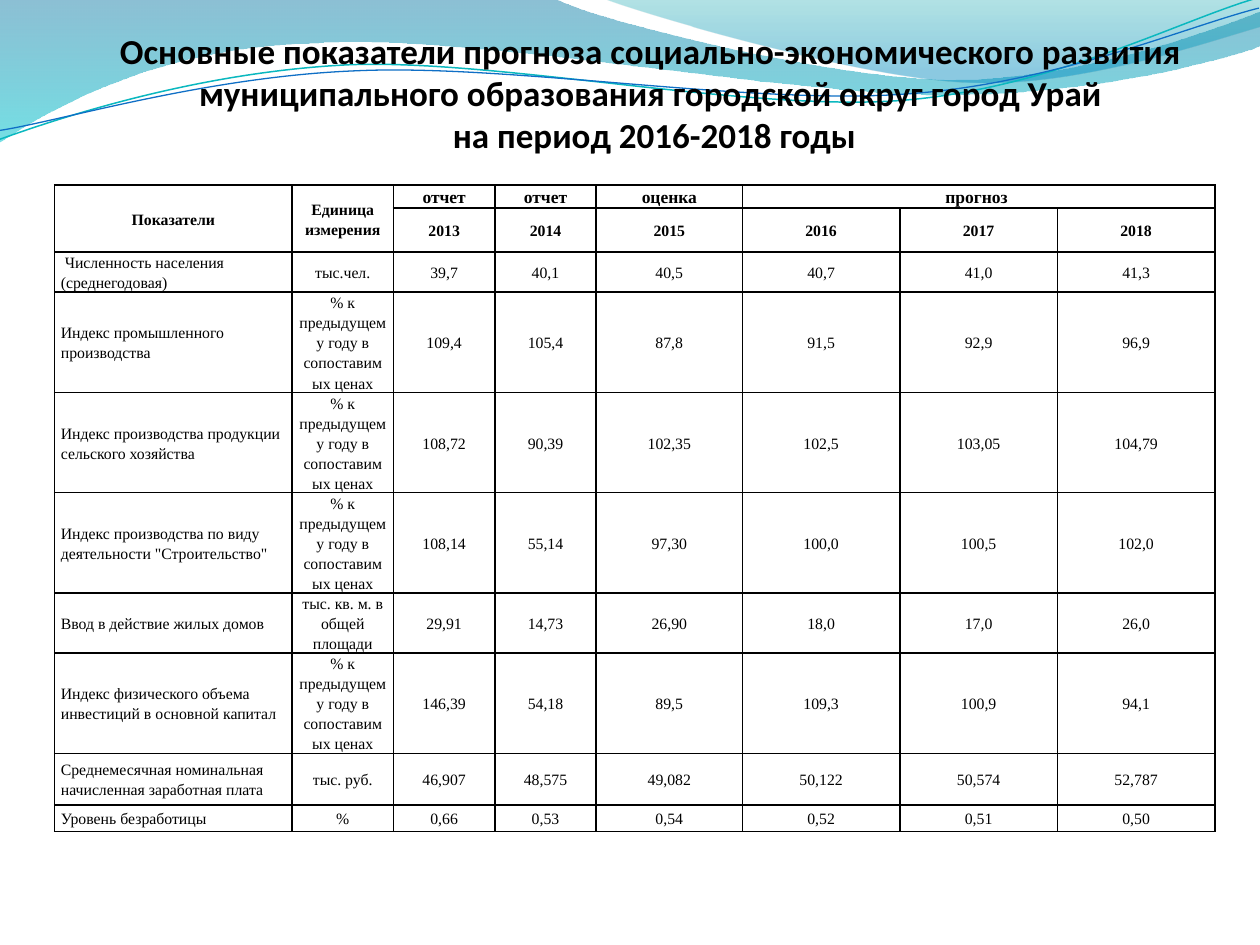
"""Build a slide with a wave header and a table of socio-economic forecast figures."""
import lxml.etree
import pptx
import pptx.dml.color
import pptx.enum.text
import pptx.oxml
import pptx.oxml.ns
import pptx.util

deck = pptx.Presentation()
deck.slide_width, deck.slide_height = pptx.util.Inches(10), pptx.util.Inches(7.5)
grid = deck.slide_width // 1000
page = deck.slides.add_slide(deck.slide_layouts[6])
qn = pptx.oxml.ns.qn
CENTER = pptx.enum.text.PP_ALIGN.CENTER
LEFT = pptx.enum.text.PP_ALIGN.LEFT
MIDDLE = pptx.enum.text.MSO_ANCHOR.MIDDLE


def color(hex_text):
    return pptx.dml.color.RGBColor.from_string(hex_text)


def write(para, text, name, size, bold, align):
    para.alignment = align
    span = para.add_run()
    span.text = text
    for key, value in {"name": name, "size": pptx.util.Pt(size), "bold": bold}.items():
        setattr(span.font, key, value)
    span.font.color.rgb = color("000000")


waves = [
    {"box": (-1, -1, 1002, 114),
     "parts": [(0, 0), (440, -1), (476, 17, 664, 63, 758, 63), (853, 63, 958, 26, 1000, 9), (1001, 36),
               (983, 44, 870, 76, 746, 75), (622, 75, 382, 28, 257, 34), (129, 36, 46, 83, -1, 113), (0, 0)],
     "stops": [("0074A1", 0, 45), ("00C6CF", 1, 55)]},
    {"box": (479, -1, 521, 70),
     "parts": [(479, -1), (509, 11, 682, 62, 769, 65), (856, 69, 961, 32, 1000, 21), (1000, 0), (479, -1)],
     "stops": [("00A1A9", 0, 30), ("008BBF", 0.8, 45)]},
    {"box": (-2, 22, 1002, 71), "line": ("0AB8BF", 0.85),
     "parts": [(-2, 87), (47, 72, 158, 41, 278, 41), (396, 42, 591, 93, 712, 90), (832, 87, 940, 36, 1000, 22)]},
    {"box": (-2, 30, 1003, 58), "line": ("0F6FC6", 0.75),
     "parts": [(-2, 80), (46, 75, 164, 45, 283, 46), (403, 46, 596, 88, 716, 85), (835, 83, 942, 42, 1001, 30)]},
]
for wave in waves:
    left, top, width, height = wave["box"]
    anchors = [part[-2:] for part in wave["parts"]]
    builder = page.shapes.build_freeform(*anchors[0], scale=grid)
    builder.add_line_segments(anchors[1:], close="stops" in wave)
    shape = builder.convert_to_shape()
    for key, value in zip(("left", "top", "width", "height"), wave["box"]):
        setattr(shape, key, value * grid)
    outline = shape.element.spPr.find(".//" + qn("a:path"))
    outline.set("w", str(width))
    outline.set("h", str(height))
    segments = [node for node in outline if node.tag != qn("a:close")]
    for node, part in zip(segments, wave["parts"]):
        curve = lxml.etree.Element(qn("a:cubicBezTo") if len(part) == 6 else node.tag)
        for x, y in zip(part[::2], part[1::2]):
            lxml.etree.SubElement(curve, qn("a:pt"), x=str(x - left), y=str(y - top))
        outline.replace(node, curve)
    shape.shadow.inherit = False
    if "line" in wave:
        shape.rotation = 357.3
        shape.fill.background()
        shape.line.color.rgb = color(wave["line"][0])
        shape.line.width = pptx.util.Pt(wave["line"][1])
        continue
    shape.line.fill.background()
    shape.fill.gradient()
    shape.fill.gradient_angle = 270
    for stop, (tone, position, opacity) in zip(shape.fill.gradient_stops, wave["stops"]):
        stop.color.rgb = color(tone)
        stop.position = position
    tones = shape.element.spPr.findall(".//" + qn("a:gs") + "/" + qn("a:srgbClr"))
    for tone, (_, _, opacity) in zip(tones, wave["stops"]):
        lxml.etree.SubElement(tone, qn("a:alpha"), val=str(opacity * 1000))

INDEX = "% к предыдущему году в сопоставимых ценах"
rows = [
    ["Показатели", "Единица измерения", "отчет", "отчет", "оценка", "прогноз ", "", ""],
    ["", "", "2013", "2014", "2015", "2016", "2017", "2018"],
    [" Численность населения (среднегодовая)", "тыс.чел.", "39,7", "40,1", "40,5", "40,7", "41,0", "41,3"],
    ["Индекс промышленного производства", INDEX, "109,4", "105,4", "87,8", "91,5", "92,9", "96,9"],
    ["Индекс производства продукции сельского хозяйства", INDEX,
     "108,72", "90,39", "102,35", "102,5", "103,05", "104,79"],
    ["Индекс производства по виду деятельности \"Строительство\"", INDEX,
     "108,14", "55,14", "97,30", "100,0", "100,5", "102,0"],
    ["Ввод в действие жилых домов", "тыс. кв. м. в общей площади",
     "29,91", "14,73", "26,90", "18,0", "17,0", "26,0"],
    ["Индекс физического объема инвестиций в основной капитал", INDEX,
     "146,39", "54,18", "89,5", "109,3", "100,9", "94,1"],
    ["Среднемесячная номинальная начисленная заработная плата", "тыс. руб.",
     "46,907", "48,575", "49,082", "50,122", "50,574", "52,787"],
    ["Уровень безработицы", "%", "0,66", "0,53", "0,54", "0,52", "0,51", "0,50"],
]
widths = [188.5, 80.5, 80.5, 80.5, 116, 125, 125, 125]
heights = [18, 35, 27, 68, 68, 68, 41, 68, 41, 21]
frame = page.shapes.add_table(len(rows), len(widths), int(43.3 * grid), 147 * grid,
                              int(sum(widths) * grid), 540 * grid)
table = frame.table
table.first_row = table.horz_banding = False
for column, width in zip(table.columns, widths):
    column.width = int(width * grid)
for row, height in zip(table.rows, heights):
    row.height = height * grid
frame.height = 540 * grid
for top, left, bottom, right in [(0, 0, 1, 0), (0, 1, 1, 1), (0, 5, 0, 7)]:
    table.cell(top, left).merge(table.cell(bottom, right))

cell_format = {"margin_left": 5 * grid, "margin_right": 5 * grid, "margin_top": 0,
               "margin_bottom": 0, "vertical_anchor": MIDDLE}
for r, texts in enumerate(rows):
    for c, text in enumerate(texts):
        cell = table.cell(r, c)
        for key, value in cell_format.items():
            setattr(cell, key, value)
        cell.fill.background()
        for place, side in enumerate(("lnL", "lnR", "lnT", "lnB")):
            cell._tc.tcPr.insert(place, pptx.oxml.parse_xml(
                f'<a:{side} {pptx.oxml.ns.nsdecls("a")} w="12700"><a:solidFill>'
                f'<a:srgbClr val="000000"/></a:solidFill></a:{side}>'))
        para = cell.text_frame.paragraphs[0]
        para.line_spacing = 1.15
        if text:
            write(para, text, "Times New Roman", 10 if r == 0 and c > 1 else 9, r < 2,
                  LEFT if c == 0 and r > 1 else CENTER)

box = page.shapes.add_textbox(43 * grid, 18 * grid, 953 * grid, 141 * grid)
title_format = {"word_wrap": True, "vertical_anchor": MIDDLE, "margin_bottom": 35 * grid,
                "auto_size": pptx.enum.text.MSO_AUTO_SIZE.SHAPE_TO_FIT_TEXT}
for key, value in title_format.items():
    setattr(box.text_frame, key, value)
titles = ["Основные показатели прогноза социально-экономического развития ",
          "муниципального образования городской округ город Урай ",
          "на период 2016-2018 годы"]
for number, text in enumerate(titles):
    para = box.text_frame.add_paragraph() if number else box.text_frame.paragraphs[0]
    write(para, text, "Calibri", 20, True, CENTER)

deck.save("out.pptx")
